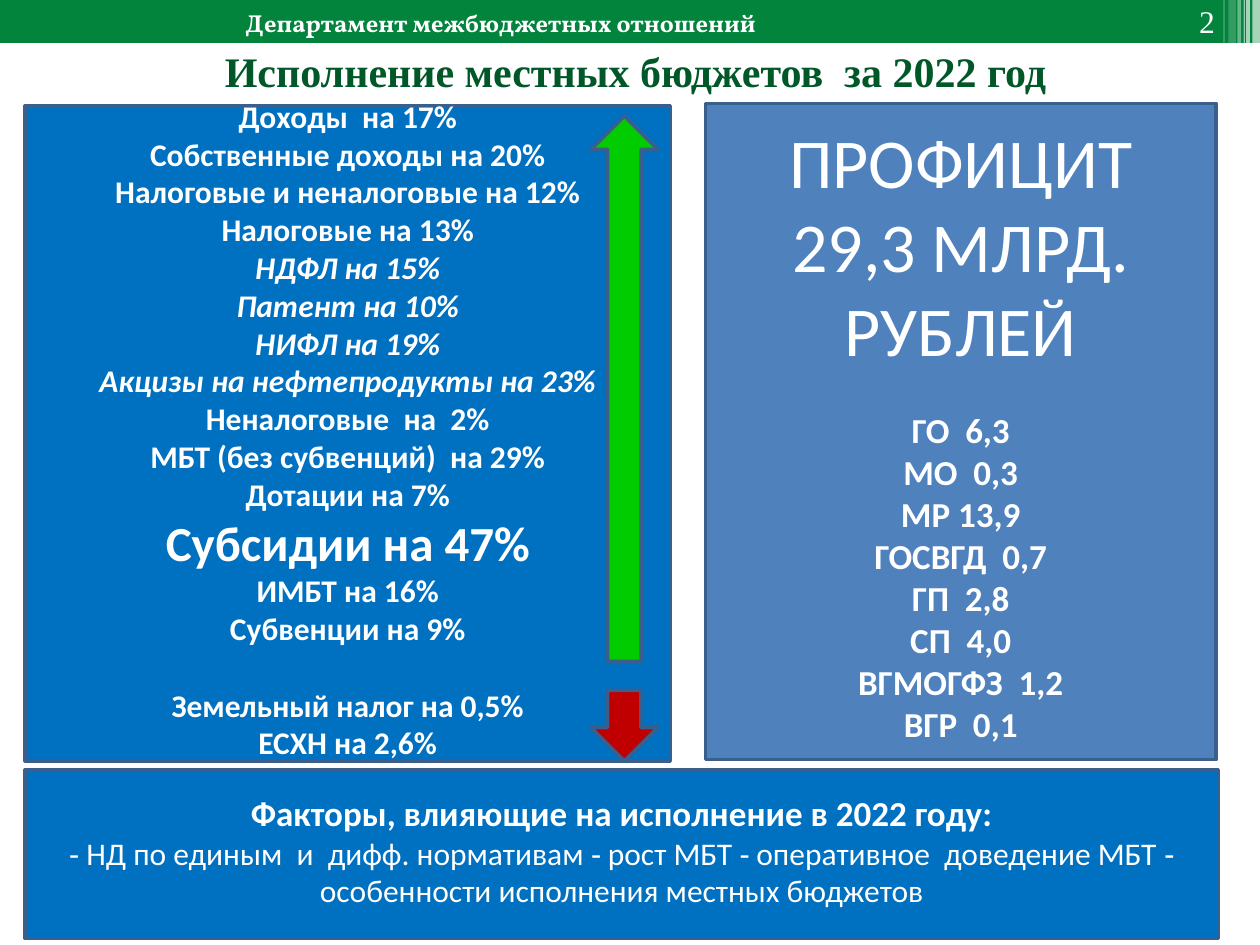
from lxml import etree
from pptx import Presentation
from pptx import util as u
from pptx.dml.color import RGBColor
from pptx.enum import shapes, text
from pptx.oxml.ns import qn

COLORS = {
    "header": "02843D", "white": "FFFFFF", "title": "005828",
    "blue": "0070C0", "steel": "4F81BD", "outline": "3A5F8C",
    "up": "00CC00", "down": "C00000",
}
SERIF = "Times New Roman"
CENTER = text.PP_ALIGN.CENTER

# Left, width and opacity (%) of the stripes at the end of the header
STRIPES = [(9.94, 0.06, 65), (9.89, 0.03, 65), (9.87, 0.01, 60),
           (9.82, 0.03, 40), (9.75, 0.06, 20), (9.71, 0.01, 30)]

GROWTH = ["Доходы  на 17%", "Собственные доходы на 20%",
          "Налоговые и неналоговые на 12%", "Налоговые на 13%"]
GROWTH_TAXES = ["НДФЛ на 15%", "Патент на 10%", "НИФЛ на 19%",
                "Акцизы на нефтепродукты на 23%"]
GROWTH_OTHER = ["Неналоговые  на  2%", "МБТ (без субвенций)  на 29%", "Дотации на 7%"]
GROWTH_TRANSFERS = ["ИМБТ на 16%", "Субвенции на 9%"]
DECLINE = ["Земельный налог на 0,5%", "ЕСХН на 2,6%"]
SURPLUS = ["ГО  6,3", "МО  0,3", "МР 13,9", "ГОСВГД  0,7",
           "ГП  2,8", "СП  4,0", "ВГМОГФЗ  1,2", "ВГР  0,1"]
FACTORS = ("⁃ НД по единым  и  дифф. нормативам ⁃ рост МБТ ⁃ оперативное  "
           "доведение МБТ ⁃ особенности исполнения местных бюджетов")


def color(name):
    return RGBColor.from_string(COLORS[name])


def lines(words, size, bold=True, italic=False, gap=0):
    """Lines in one style; gap is the space above the first of them."""
    return [(line, size, bold, italic, 0 if i else gap) for i, line in enumerate(words)]


def write(frame, rows, font="Calibri", ink="white", align=CENTER):
    for i, (words, size, bold, italic, gap) in enumerate(rows):
        para = frame.paragraphs[0] if i == 0 else frame.add_paragraph()
        para.text = words
        para.alignment = align
        if gap:
            para.space_before = u.Pt(gap)
        para.font.name = font
        para.font.size = u.Pt(size)
        para.font.bold = bold
        para.font.italic = italic
        para.font.color.rgb = color(ink)


def add_block(page, kind, place, fill, outline=None, opacity=100):
    block = page.shapes.add_shape(kind, *map(u.Inches, place))
    block.shadow.inherit = False
    block.fill.solid()
    block.fill.fore_color.rgb = color(fill)
    if opacity < 100:
        tint = block.fill._xPr.find(qn("a:solidFill"))[0]
        etree.SubElement(tint, qn("a:alpha"), val=str(opacity * 1000))
    if outline:
        block.line.color.rgb = color(outline)
        block.line.width = u.Pt(2)
    else:
        block.line.fill.background()
    return block


def add_panel(page, place, fill, rows):
    panel = add_block(page, shapes.MSO_SHAPE.RECTANGLE, place, fill, "outline")
    frame = panel.text_frame
    frame.word_wrap = True
    frame.vertical_anchor = text.MSO_ANCHOR.MIDDLE
    write(frame, rows)
    return panel


def add_label(page, place, words, size, font, ink="white", bold=True,
              align=CENTER, middle=True):
    box = page.shapes.add_textbox(*map(u.Inches, place))
    frame = box.text_frame
    frame.word_wrap = True
    if middle:
        frame.vertical_anchor = text.MSO_ANCHOR.MIDDLE
    write(frame, lines([words], size, bold), font, ink, align)
    return frame


def add_header(page):
    bar = shapes.MSO_SHAPE.RECTANGLE
    add_block(page, bar, (0, 0, 10, 0.34), "header")
    for left, width, opacity in STRIPES:
        add_block(page, bar, (left, 0, width, 0.34), "white", opacity=opacity)

    # Page number and department
    number = add_label(page, (9.34, 0.02, 0.48, 0.3), "2", 18, SERIF,
                       bold=False, middle=False)
    number.margin_left = number.margin_right = 0
    number.margin_top = number.margin_bottom = 0
    add_label(page, (1.85, 0.01, 6.3, 0.34), "Департамент межбюджетных отношений",
              14, "Vollkorn", align=text.PP_ALIGN.JUSTIFY)


def main():
    deck = Presentation()
    deck.slide_width, deck.slide_height = u.Inches(10), u.Inches(7.5)
    page = deck.slides.add_slide(deck.slide_layouts[6])

    add_header(page)
    add_label(page, (0.43, 0.44, 9.23, 0.24), "Исполнение местных бюджетов  за 2022 год",
              24, SERIF, "title")

    # Growth and decline
    changes = add_panel(page, (0.2, 0.84, 5.12, 5.2), "blue",
                        lines(GROWTH, 18) + lines(GROWTH_TAXES, 18, italic=True)
                        + lines(GROWTH_OTHER, 18) + lines(["Субсидии на 47%"], 28)
                        + lines(GROWTH_TRANSFERS, 18) + lines(DECLINE, 18, gap=22))
    changes.text_frame.margin_bottom = u.Inches(0.12)

    # Surplus
    add_panel(page, (5.6, 0.82, 4.05, 5.21), "steel",
              lines(["ПРОФИЦИТ", "29,3 МЛРД. РУБЛЕЙ"], 40, bold=False)
              + lines(SURPLUS, 20, gap=22))

    # Direction arrows
    arrow = shapes.MSO_SHAPE.DOWN_ARROW
    rise = add_block(page, arrow, (4.69, 0.92, 0.53, 4.33), "up", "outline")
    rise.rotation = 180
    add_block(page, arrow, (4.69, 5.48, 0.53, 0.56), "down", "outline")

    # Factors
    factors = add_panel(page, (0.2, 6.11, 9.47, 1.34), "blue",
                        lines(["Факторы, влияющие на исполнение в 2022 году:"], 20)
                        + lines([FACTORS], 18, bold=False))
    factors.text_frame.margin_bottom = u.Inches(0.11)

    deck.save("out.pptx")


if __name__ == "__main__":
    main()
